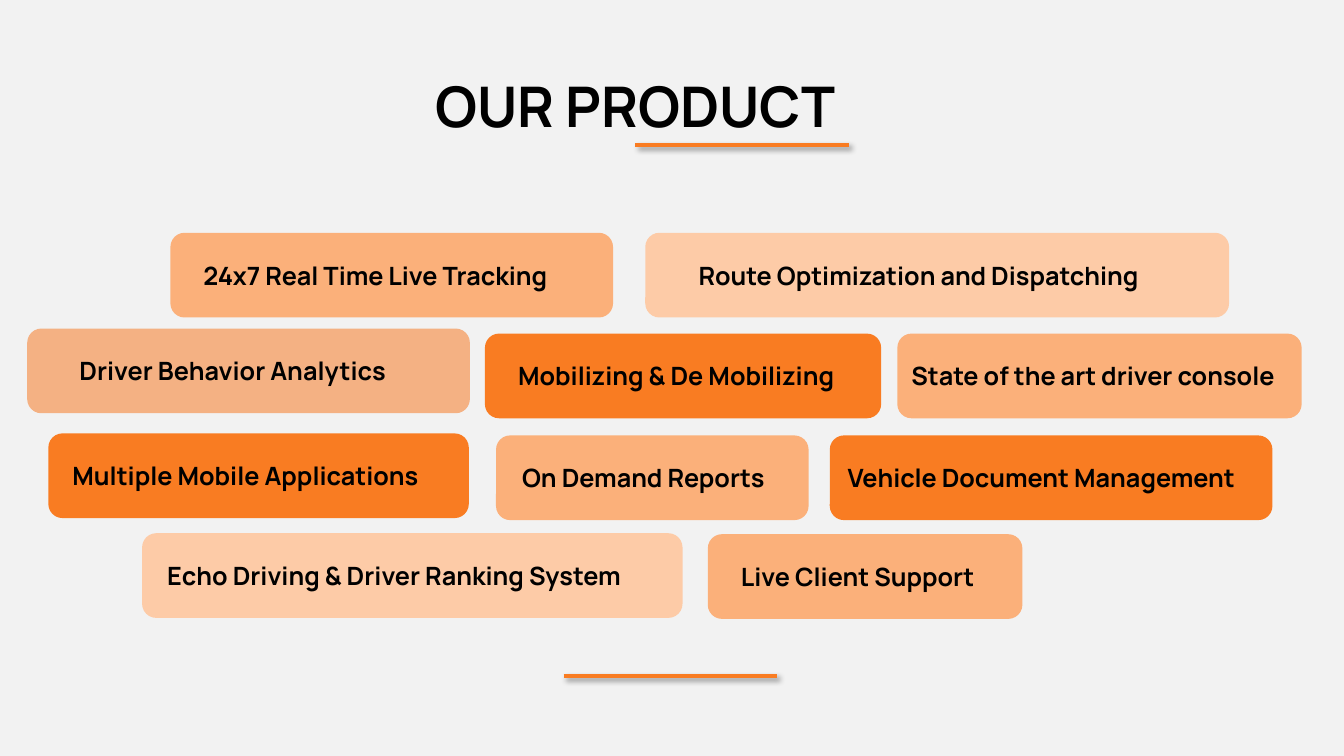
"""Build the "Our product" slide with its feature cards."""
from dataclasses import dataclass

from lxml import etree
from pptx import Presentation
from pptx.dml.color import RGBColor
from pptx.enum import shapes, text
from pptx.oxml import ns
from pptx.util import Inches, Pt

FONT = "Manrope"
BLACK, GREY = "000000", "F2F2F2"
ORANGE, APRICOT, PEACH, TAN = "F97C22", "FBB07A", "FDCBA7", "F4B183"
SLIDE_W, SLIDE_H = 13.33, 7.5
CARD_H, LABEL_H = 0.84, 0.4
RULE_W = 2.12


@dataclass
class Card:
    label: str
    left: float
    top: float
    width: float
    label_left: float
    label_width: float
    color: str


CARDS = [
    Card("24x7 Real Time Live Tracking", 1.69, 2.31, 4.39, 1.92, 4.14, APRICOT),
    Card("Route Optimization and Dispatching", 6.4, 2.31, 5.79, 6.83, 4.93, PEACH),
    Card("Driver Behavior Analytics", 0.27, 3.26, 4.39, 0.69, 3.53, TAN),
    Card("Mobilizing & De Mobilizing", 4.81, 3.31, 3.93, 5.04, 3.65, ORANGE),
    Card("State of the art driver console", 8.9, 3.31, 4.01, 8.94, 4.06, APRICOT),
    Card("Multiple Mobile Applications", 0.48, 4.3, 4.17, 0.62, 3.91, ORANGE),
    Card("On Demand Reports", 4.92, 4.32, 3.1, 5.08, 2.85, APRICOT),
    Card("Vehicle Document Management", 8.23, 4.32, 4.39, 8.31, 4.56, ORANGE),
    Card("Echo Driving & Driver Ranking System", 1.41, 5.29, 5.36, 1.56, 5.22, PEACH),
    Card("Live Client Support", 7.02, 5.3, 3.12, 7.25, 2.79, APRICOT),
]


def rgb(value: str) -> RGBColor:
    return RGBColor.from_string(value)


def add_block(s, kind, left: float, top: float, width: float, height: float, color: str) -> None:
    sp = s.shapes.add_shape(kind, Inches(left), Inches(top), Inches(width), Inches(height))
    sp.shadow.inherit = False
    sp.fill.solid()
    sp.fill.fore_color.rgb = rgb(color)
    sp.line.fill.background()


def add_label(s, content: str, left: float, top: float, width: float, height: float, size: int) -> None:
    tf = s.shapes.add_textbox(Inches(left), Inches(top), Inches(width), Inches(height)).text_frame
    tf.word_wrap = True
    tf.auto_size = text.MSO_AUTO_SIZE.SHAPE_TO_FIT_TEXT
    p = tf.paragraphs[0]
    p.text = content
    p.font.name, p.font.size, p.font.bold = FONT, Pt(size), True
    p.font.color.rgb = rgb(BLACK)


def add_card(s, card: Card) -> None:
    add_block(s, shapes.MSO_SHAPE.ROUNDED_RECTANGLE, card.left, card.top, card.width, CARD_H, card.color)
    label_top = card.top + (CARD_H - LABEL_H) / 2
    add_label(s, card.label, card.label_left, label_top, card.label_width, LABEL_H, 18)


def add_rule(s, left: float, top: float) -> None:
    line = s.shapes.add_connector(
        shapes.MSO_CONNECTOR.STRAIGHT, Inches(left), Inches(top), Inches(left + RULE_W), Inches(top))
    line.line.color.rgb = rgb(ORANGE)
    line.line.width = Pt(3)
    effects = etree.SubElement(line._element.spPr, ns.qn("a:effectLst"))
    shadow = etree.SubElement(
        effects, ns.qn("a:outerShdw"), blurRad=str(Pt(4)), dist=str(Pt(3)),
        dir=str(45 * 60000), algn="tl", rotWithShape="0")
    tint = etree.SubElement(shadow, ns.qn("a:srgbClr"), val=BLACK)
    etree.SubElement(tint, ns.qn("a:alpha"), val="40000")


def main() -> None:
    prs = Presentation()
    prs.slide_width, prs.slide_height = Inches(SLIDE_W), Inches(SLIDE_H)
    s = prs.slides.add_slide(prs.slide_layouts[6])
    add_block(s, shapes.MSO_SHAPE.RECTANGLE, 0, 0, SLIDE_W, SLIDE_H, GREY)
    for card in CARDS:
        add_card(s, card)
    add_label(s, "OUR PRODUCT", 4.22, 0.66, 4.58, 0.77, 40)
    add_rule(s, 6.3, 1.44)
    add_rule(s, 5.59, 6.71)
    prs.save("out.pptx")


if __name__ == "__main__":
    main()
